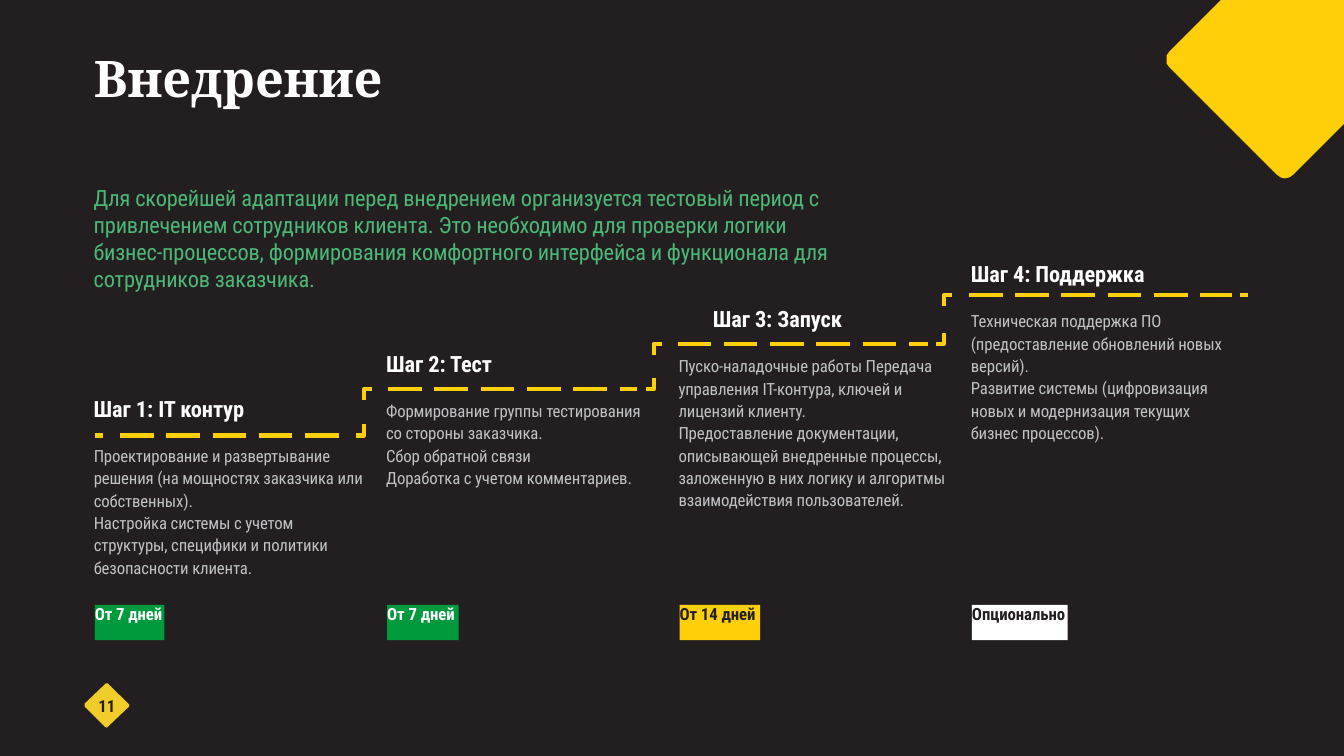
from dataclasses import dataclass

from lxml.etree import SubElement
from pptx import Presentation
from pptx.dml.color import RGBColor
from pptx.enum.dml import MSO_LINE
from pptx.enum.shapes import MSO_CONNECTOR, MSO_SHAPE
from pptx.enum.text import MSO_ANCHOR, PP_ALIGN
from pptx.oxml.ns import qn
from pptx.shapes.autoshape import Shape
from pptx.slide import Slide
from pptx.text.text import TextFrame
from pptx.util import Inches, Pt

DARK = RGBColor(0x23, 0x1F, 0x20)
WHITE = RGBColor(0xFF, 0xFF, 0xFF)
GRAY = RGBColor(0xC0, 0xC2, 0xC4)
MINT = RGBColor(0x4C, 0xB8, 0x78)
GREEN = RGBColor(0x00, 0x9A, 0x3E)
YELLOW = RGBColor(0xFF, 0xD0, 0x0A)
GOLD = RGBColor(0xF0, 0xCD, 0x2B)

HEADING_FONT = "Cambria"
BODY_FONT = "Roboto Condensed"

LEFT = 0.93
COLUMN_PITCH = 2.9
STEP_RISE = 0.445
HEADING_TOP = 3.9
BODY_TOP = 4.38
BADGE_TOP = 6.0
RISER_LEFT = 3.61
RISER_PITCH = 2.875
CORNER_WIDTH = 0.08
CORNER_HEIGHT = 0.11

Point = tuple[float, float]


@dataclass(frozen=True)
class Step:
    heading: str
    body: tuple[str, ...]
    body_width: float
    badge: str
    badge_width: float
    badge_fill: RGBColor
    badge_color: RGBColor
    level: float
    dash_start: float
    dash_end: float
    heading_shift: float = 0


STEPS = (
    Step("Шаг 1: IT контур",
         ("Проектирование и развертывание решения (на мощностях заказчика или собственных).",
          "Настройка системы с учетом\vструктуры, специфики и политики безопасности клиента."),
         2.75, "От 7 дней", 0.69, GREEN, WHITE, 4.32, 1.19, 3.44),
    Step("Шаг 2: Тест",
         ("Формирование группы тестирования со стороны заказчика.",
          "Сбор обратной связи",
          "Доработка с учетом комментариев."),
         2.6, "От 7 дней", 0.71, GREEN, WHITE, 3.86, 3.85, 6.32),
    Step("Шаг 3: Запуск",
         ("Пуско-наладочные работы Передача управления IT-контура, ключей и лицензий клиенту.",
          "Предоставление документации, описывающей внедренные процессы, "
          "заложенную в них логику и алгоритмы взаимодействия пользователей."),
         2.73, "От 14 дней", 0.8, YELLOW, DARK, 3.41, 6.72, 9.2, 0.34),
    Step("Шаг 4: Поддержка",
         ("Техническая поддержка ПО (предоставление обновлений новых версий).",
          "Развитие системы (цифровизация новых и модернизация текущих бизнес процессов)."),
         2.57, "Опционально", 0.95, WHITE, DARK, 2.93, 9.61, 12.22),
)

INTRO = (
    "Для скорейшей адаптации перед внедрением организуется тестовый период с "
    "привлечением сотрудников клиента. Это необходимо для проверки логики",
    "бизнес-процессов, формирования комфортного интерфейса и функционала для "
    "сотрудников заказчика.",
)

CORNER_DECORATION = (
    (13.33, 0), (12.11, 0), (11.6, 0.51), (11.57, 0.55), (11.57, 0.63), (11.6, 0.67),
    (12.66, 1.73), (12.7, 1.76), (12.74, 1.77), (12.79, 1.76), (12.83, 1.73), (13.33, 1.23),
)
PAGE_DIAMOND = (
    (1.06, 6.78), (1.05, 6.78), (0.84, 6.98), (0.84, 7.01), (1.04, 7.21), (1.06, 7.22),
    (1.07, 7.21), (1.28, 7.01), (1.28, 6.99), (1.07, 6.78),
)


def write(frame: TextFrame, *texts: str, size: float, color: RGBColor,
          font: str = BODY_FONT, bold: bool = False, tracking: float = 0,
          spacing: float | Pt | None = None, align: PP_ALIGN = PP_ALIGN.LEFT) -> None:
    frame.word_wrap = True
    frame.vertical_anchor = MSO_ANCHOR.TOP
    frame.margin_left = frame.margin_right = frame.margin_bottom = 0
    frame.margin_top = Inches(0.02)
    for index, text in enumerate(texts):
        paragraph = frame.add_paragraph() if index else frame.paragraphs[0]
        paragraph.text = text
        paragraph.alignment = align
        paragraph.space_before = Pt(0)
        paragraph.line_spacing = spacing
        for run in paragraph.runs:
            run.font.name = font
            run.font.size = Pt(size)
            run.font.bold = bold
            run.font.color.rgb = color
            if tracking:
                run._r.get_or_add_rPr().set("spc", str(round(tracking * 100)))


def add_text(slide: Slide, left: float, top: float, width: float, height: float,
             *texts: str, **text_format) -> None:
    box = slide.shapes.add_textbox(Inches(left), Inches(top), Inches(width), Inches(height))
    write(box.text_frame, *texts, **text_format)


def add_outline(slide: Slide, points: tuple[Point, ...], close: bool) -> Shape:
    start, *rest = [(Inches(x), Inches(y)) for x, y in points]
    builder = slide.shapes.build_freeform(*start)
    builder.add_line_segments(rest, close=close)
    shape = builder.convert_to_shape()
    shape.shadow.inherit = False
    return shape


def add_filled(slide: Slide, points: tuple[Point, ...], color: RGBColor) -> None:
    shape = add_outline(slide, points, close=True)
    shape.fill.solid()
    shape.fill.fore_color.rgb = color
    shape.line.fill.background()


def add_corner(slide: Slide, *points: Point) -> None:
    shape = add_outline(slide, points, close=False)
    shape.fill.background()
    shape.line.color.rgb = YELLOW
    shape.line.width = Pt(3)


def add_level_line(slide: Slide, start: float, end: float, level: float,
                   dash: MSO_LINE | None = None) -> None:
    connector = slide.shapes.add_connector(
        MSO_CONNECTOR.STRAIGHT, Inches(start), Inches(level), Inches(end), Inches(level))
    connector.line.color.rgb = YELLOW
    connector.line.width = Pt(3)
    if dash:
        connector.line.dash_style = dash
    SubElement(connector._element.spPr, qn("a:effectLst"))


def add_step(slide: Slide, index: int, step: Step) -> None:
    left = LEFT + index * COLUMN_PITCH
    rise = index * STEP_RISE
    add_text(slide, left + step.heading_shift, HEADING_TOP - rise, 1.9, 0.3, step.heading,
             size=16, color=WHITE, bold=True, tracking=-0.05)
    add_text(slide, left, BODY_TOP - rise, step.body_width, 1.34, *step.body,
             size=12, color=GRAY, spacing=1.11, tracking=-0.1)
    badge = slide.shapes.add_shape(MSO_SHAPE.RECTANGLE, Inches(left + 0.01), Inches(BADGE_TOP),
                                   Inches(step.badge_width), Inches(0.35))
    badge.shadow.inherit = False
    badge.fill.solid()
    badge.fill.fore_color.rgb = step.badge_fill
    badge.line.fill.background()
    write(badge.text_frame, step.badge, size=12, color=step.badge_color, bold=True,
          spacing=Pt(12), tracking=-0.05)
    add_level_line(slide, step.dash_start, step.dash_end, step.level, MSO_LINE.LONG_DASH)


def add_riser(slide: Slide, x: float, lower: float, upper: float) -> None:
    add_corner(slide, (x - CORNER_WIDTH, lower), (x, lower), (x, lower - CORNER_HEIGHT))
    add_corner(slide, (x, upper + CORNER_HEIGHT), (x, upper), (x + CORNER_WIDTH, upper))


def main() -> None:
    presentation = Presentation()
    presentation.slide_width = Inches(13.33)
    presentation.slide_height = Inches(7.5)
    slide = presentation.slides.add_slide(presentation.slide_layouts[5])
    slide.background.fill.solid()
    slide.background.fill.fore_color.rgb = DARK

    title = slide.shapes.title
    title.left, title.top = Inches(LEFT), Inches(0.45)
    title.width, title.height = Inches(3.2), Inches(1.27)
    write(title.text_frame, "Внедрение", size=36, color=WHITE, font=HEADING_FONT, bold=True)

    add_text(slide, LEFT, 1.81, 7.44, 1.1, *INTRO, size=16, color=MINT, tracking=-0.1)
    for index, step in enumerate(STEPS):
        add_step(slide, index, step)
    for index, (lower, upper) in enumerate(zip(STEPS, STEPS[1:])):
        add_riser(slide, RISER_LEFT + index * RISER_PITCH, lower.level, upper.level)
    add_level_line(slide, 0.94, 1.02, STEPS[0].level)
    add_level_line(slide, 12.3, 12.38, STEPS[-1].level)

    add_filled(slide, CORNER_DECORATION, YELLOW)
    add_filled(slide, PAGE_DIAMOND, GOLD)
    add_text(slide, 0.84, 6.88, 0.44, 0.22, "11", size=12, color=DARK, bold=True,
             align=PP_ALIGN.CENTER)
    presentation.save("out.pptx")


if __name__ == "__main__":
    main()
